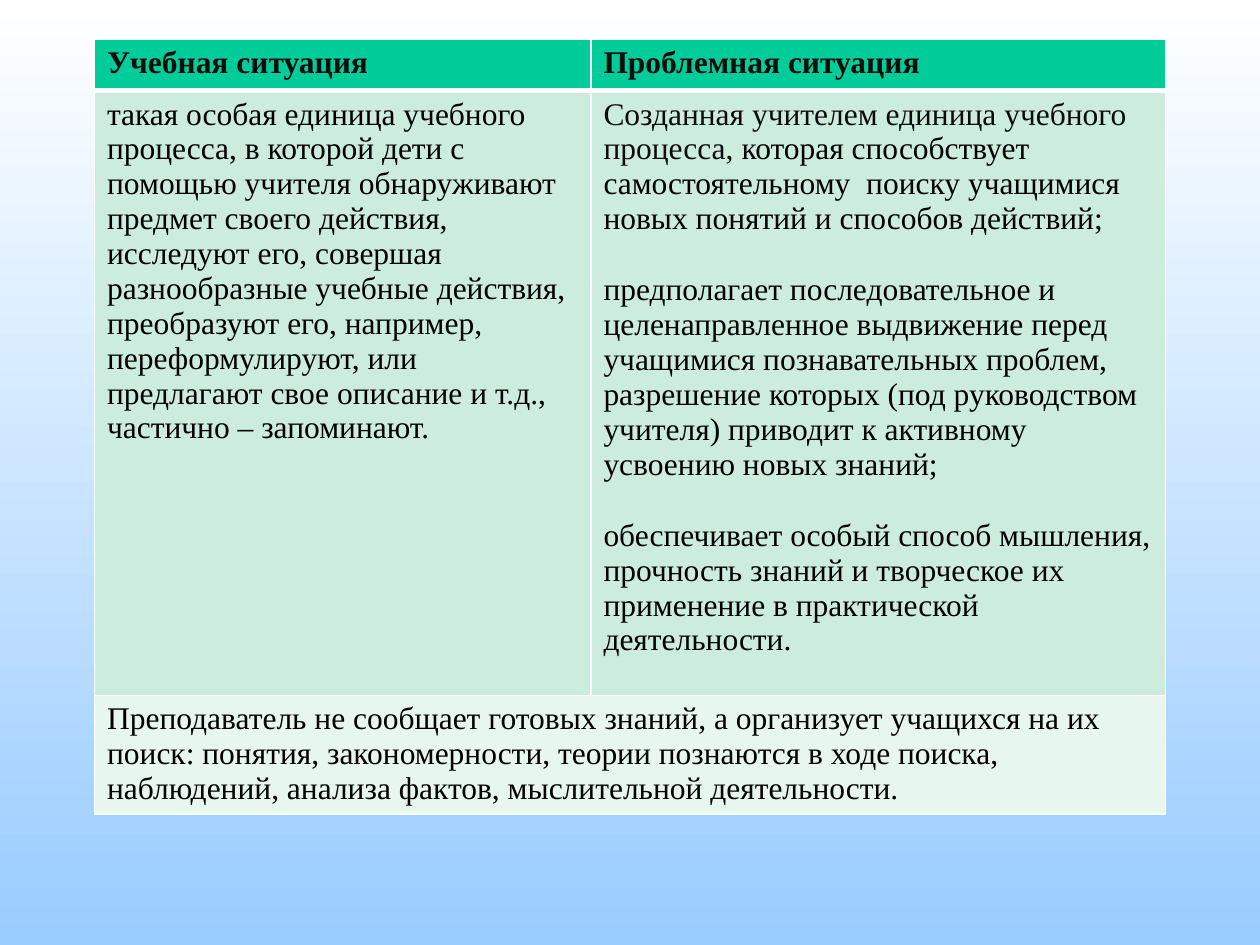
from lxml.etree import SubElement
from pptx import Presentation
from pptx.dml.color import RGBColor
from pptx.oxml.ns import qn
from pptx.util import Inches, Pt

SLIDE_WIDTH, SLIDE_HEIGHT = 10, 7.5
TABLE_LEFT, TABLE_TOP = 0.75, 0.31
COLUMN_WIDTHS = [3.94, 4.56]
ROW_HEIGHTS = [0.41, 4.8, 0.94]
ROW_FILLS = ["00CC99", "CCECDE", "E7F6EF"]
BACKGROUND = ["FFFFFF", "99CCFF"]
BLACK, DARK, WHITE = "000000", "0D0D0D", "FFFFFF"
LINE_GAP = 20.7

ROWS = [
    [
        [[("Учебная ситуация", DARK)]],
        [[("Проблемная ситуация", DARK)]],
    ],
    [
        [[("такая особая единица учебного процесса, в которой дети с помощью учителя "
           "обнаруживают предмет своего действия, исследуют его, совершая разнообразные "
           "учебные действия, преобразуют его, например, переформулируют, или предлагают "
           "свое описание и т.д., частично – запоминают.", BLACK)]],
        [
            [("Созданная учителем единица учебного процесса, ", DARK),
             ("которая способствует самостоятельному  поиску учащимися новых понятий "
              "и способов действий;", BLACK)],
            [("предполагает последовательное и целенаправленное выдвижение перед "
              "учащимися познавательных проблем, разрешение которых (под руководством "
              "учителя) приводит к активному усвоению новых знаний;", BLACK)],
            [("обеспечивает особый способ мышления, прочность знаний и творческое их "
              "применение в практической деятельности.", BLACK)],
        ],
    ],
    [
        [[("Преподаватель не сообщает готовых знаний, а организует учащихся на их поиск: "
           "понятия, закономерности, теории познаются в ходе поиска, наблюдений, анализа "
           "фактов, мыслительной деятельности.", BLACK)]],
    ],
]


def color(value):
    return RGBColor.from_string(value)


def write_text(frame, paragraphs, size=18, font="Times New Roman", bold=False, gap=LINE_GAP):
    for index, runs in enumerate(paragraphs):
        paragraph = frame.paragraphs[0] if index == 0 else frame.add_paragraph()
        paragraph.space_before = Pt(gap if index else 0)
        for text, run_color in runs:
            run = paragraph.add_run()
            run.text = text
            run.font.size = Pt(size)
            run.font.name = font
            run.font.bold = bold
            run.font.color.rgb = color(run_color)


def style_cell(cell, fill, bottom=1):
    properties = cell._tc.get_or_add_tcPr()
    for tag, width in (("a:lnL", 1), ("a:lnR", 1), ("a:lnT", 1), ("a:lnB", bottom)):
        line = SubElement(properties, qn(tag), w=str(Pt(width)))
        SubElement(SubElement(line, qn("a:solidFill")), qn("a:srgbClr"), val=WHITE)
    cell.fill.solid()
    cell.fill.fore_color.rgb = color(fill)


def paint_background(slide):
    fill = slide.background.fill
    fill.gradient()
    fill.gradient_angle = 270
    for stop, position, value in zip(fill.gradient_stops, (0, 1), BACKGROUND):
        stop.position = position
        stop.color.rgb = color(value)


def add_comparison(slide):
    table = slide.shapes.add_table(
        len(ROWS), len(COLUMN_WIDTHS), Inches(TABLE_LEFT), Inches(TABLE_TOP),
        Inches(sum(COLUMN_WIDTHS)), Inches(sum(ROW_HEIGHTS))).table
    for column, width in zip(table.columns, COLUMN_WIDTHS):
        column.width = Inches(width)
    for index, (row, height, fill) in enumerate(zip(table.rows, ROW_HEIGHTS, ROW_FILLS)):
        row.height = Inches(height)
        is_header = index == 0
        for cell in row.cells:
            style_cell(cell, fill, bottom=3 if is_header else 1)
        for cell, paragraphs in zip(row.cells, ROWS[index]):
            write_text(cell.text_frame, paragraphs, bold=is_header)
    table.cell(2, 0).merge(table.cell(2, 1))


def main():
    """Build the slide comparing a learning situation with a problem situation."""
    presentation = Presentation()
    presentation.slide_width = Inches(SLIDE_WIDTH)
    presentation.slide_height = Inches(SLIDE_HEIGHT)
    slide = presentation.slides.add_slide(presentation.slide_layouts[6])
    paint_background(slide)
    add_comparison(slide)
    presentation.save("out.pptx")


if __name__ == "__main__":
    main()
